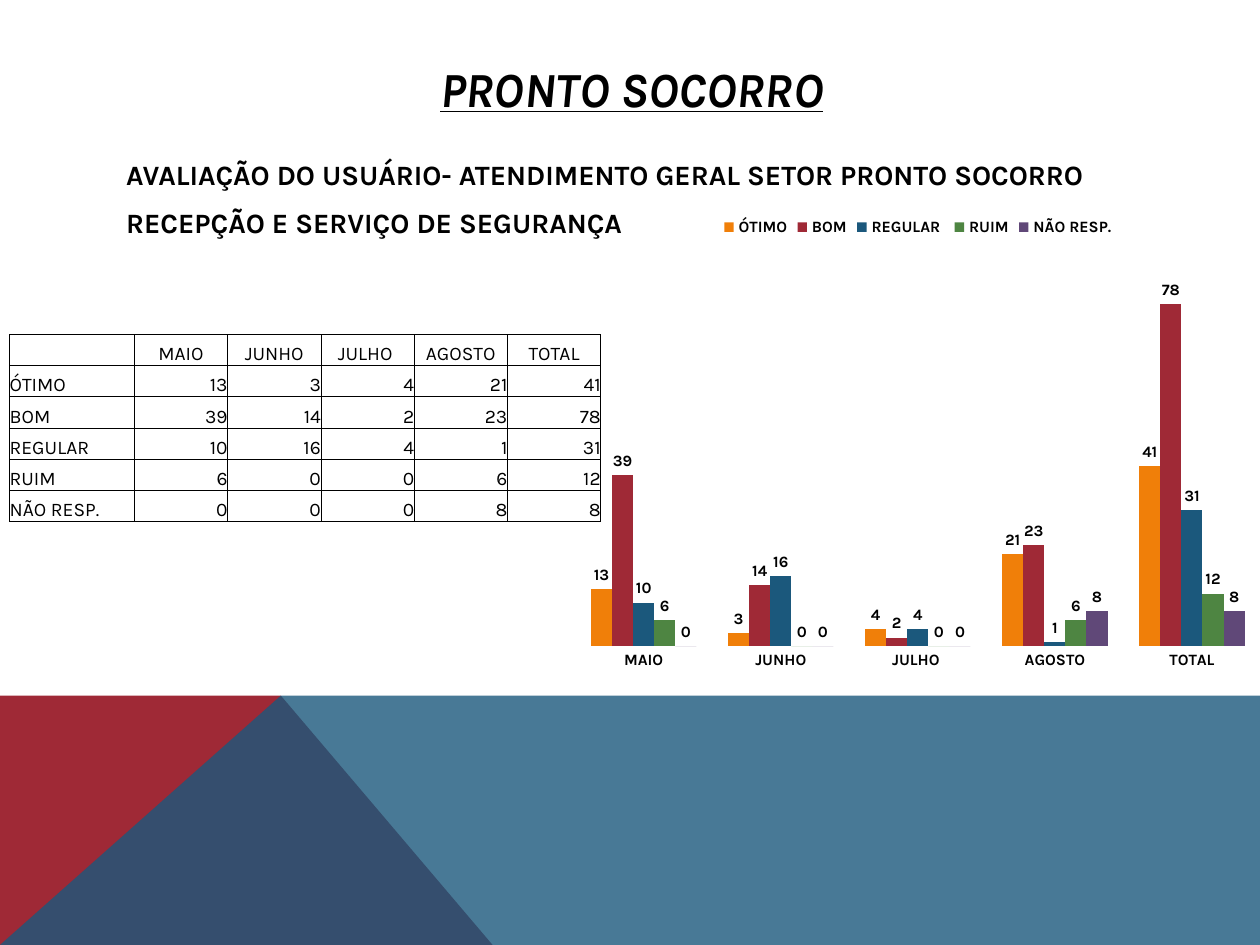
from lxml import etree
from pptx import Presentation
from pptx.chart.data import CategoryChartData
from pptx.dml.color import RGBColor
from pptx.enum.chart import XL_CHART_TYPE, XL_LABEL_POSITION, XL_LEGEND_POSITION, XL_TICK_MARK
from pptx.enum.text import MSO_ANCHOR, PP_ALIGN
from pptx.oxml import parse_xml
from pptx.oxml.ns import nsdecls, qn
from pptx.util import Pt

COLUMNS = XL_CHART_TYPE.COLUMN_CLUSTERED
OUTSIDE = XL_LABEL_POSITION.OUTSIDE_END
LEGEND_TOP = XL_LEGEND_POSITION.TOP
NO_TICKS = XL_TICK_MARK.NONE
LEFT, CENTER, RIGHT = PP_ALIGN.LEFT, PP_ALIGN.CENTER, PP_ALIGN.RIGHT
TOP, MIDDLE, BOTTOM = MSO_ANCHOR.TOP, MSO_ANCHOR.MIDDLE, MSO_ANCHOR.BOTTOM

BLACK = RGBColor(0x00, 0x00, 0x00)
ORANGE = RGBColor(0xF0, 0x7F, 0x09)
RED = RGBColor(0x9F, 0x29, 0x36)
BLUE = RGBColor(0x1B, 0x58, 0x7C)
GREEN = RGBColor(0x4E, 0x85, 0x42)
PURPLE = RGBColor(0x60, 0x48, 0x78)

PERIODS = ["MAIO", "JUNHO", "JULHO ", "AGOSTO", "TOTAL"]
RATINGS = [
    ("ÓTIMO", ORANGE, [13, 3, 4, 21, 41]),
    ("BOM", RED, [39, 14, 2, 23, 78]),
    ("REGULAR ", BLUE, [10, 16, 4, 1, 31]),
    ("RUIM", GREEN, [6, 0, 0, 6, 12]),
    ("NÃO RESP.", PURPLE, [0, 0, 0, 8, 8]),
]


class SlideBuilder:
    def __init__(self, page, font_name="Karla"):
        self.page = page
        self.font_name = font_name

    def style(self, font, size, bold=False, italic=False, underline=False):
        font.name = self.font_name
        font.size = Pt(size)
        font.bold = bold
        font.italic = italic
        font.underline = underline
        font.color.rgb = BLACK

    def polygon(self, points, color, opacity=100):
        corners = [(Pt(x), Pt(y)) for x, y in points]
        builder = self.page.shapes.build_freeform(*corners[0])
        builder.add_line_segments(corners[1:], close=True)
        shape = builder.convert_to_shape()
        shape.shadow.inherit = False
        shape.line.fill.background()
        shape.fill.solid()
        shape.fill.fore_color.rgb = color
        if opacity < 100:
            color_node = shape.fill._xPr.find(qn("a:solidFill"))[0]
            etree.SubElement(color_node, qn("a:alpha"), val=str(opacity * 1000))

    def text(self, lines, left, top, width, height, size, align=LEFT,
             anchor=TOP, space_before=0, **emphasis):
        box = self.page.shapes.add_textbox(Pt(left), Pt(top), Pt(width), Pt(height))
        frame = box.text_frame
        frame.word_wrap = True
        frame.vertical_anchor = anchor
        frame.text = "\n".join(lines)
        for para in frame.paragraphs:
            para.alignment = align
            para.space_before = Pt(space_before)
            self.style(para.font, size, **emphasis)

    def table(self, rows, left, top, widths, row_height, size):
        frame = self.page.shapes.add_table(
            len(rows), len(widths), Pt(left), Pt(top),
            Pt(sum(widths)), Pt(row_height * len(rows)))
        table = frame.table
        table.first_row = table.horz_banding = False
        for column, width in zip(table.columns, widths):
            column.width = Pt(width)
        for r, values in enumerate(rows):
            table.rows[r].height = Pt(row_height)
            for c, value in enumerate(values):
                align = CENTER if r == 0 else LEFT if c == 0 else RIGHT
                self.fill_cell(table.cell(r, c), str(value), align, size)

    def fill_cell(self, cell, value, align, size):
        cell.margin_left = cell.margin_right = 0
        cell.margin_top = cell.margin_bottom = 0
        cell.vertical_anchor = BOTTOM
        cell.text = value
        para = cell.text_frame.paragraphs[0]
        para.alignment = align
        self.style(para.font, size)
        if not value:
            etree.SubElement(para._p, qn("a:endParaRPr"), sz=str(size * 100))
        properties = cell._tc.get_or_add_tcPr()
        for side in ("lnL", "lnR", "lnT", "lnB"):
            border = etree.SubElement(properties, qn(f"a:{side}"), w=str(Pt(0.5)))
            fill = etree.SubElement(border, qn("a:solidFill"))
            etree.SubElement(fill, qn("a:srgbClr"), val=str(BLACK))
        cell.fill.background()

    def chart(self, categories, series_rows, left, top, width, height, size):
        data = CategoryChartData()
        data.categories = categories
        for name, _, values in series_rows:
            data.add_series(name, values)
        chart = self.page.shapes.add_chart(
            COLUMNS, Pt(left), Pt(top), Pt(width), Pt(height), data).chart
        self.style(chart.font, 10)
        chart.has_title = False
        chart.has_legend = True
        chart.legend.position = LEGEND_TOP
        chart.legend.include_in_layout = False
        self.style(chart.legend.font, size, bold=True)

        category_axis = chart.category_axis
        category_axis.major_tick_mark = category_axis.minor_tick_mark = NO_TICKS
        category_axis.format.line.fill.background()
        self.style(category_axis.tick_labels.font, size, bold=True)
        value_axis = chart.value_axis
        value_axis.visible = False
        value_axis.has_major_gridlines = False
        value_axis.minimum_scale, value_axis.maximum_scale = 0, 90

        plot = chart.plots[0]
        plot.gap_width, plot.overlap = 150, 0
        plot.vary_by_categories = False
        for series, (_, color, _) in zip(plot.series, series_rows):
            series.format.fill.solid()
            series.format.fill.fore_color.rgb = color
            labels = series.data_labels
            labels.show_value = True
            labels.position = OUTSIDE
            self.style(labels.font, size, bold=True)
        self.place_plot(chart, x=0.02, y=0.1, w=0.96, h=0.83)

    def place_plot(self, chart, **fractions):
        """Fix the inner plot area as fractions of the chart frame."""
        area = chart._chartSpace.chart.plotArea
        for old in area.findall(qn("c:layout")):
            area.remove(old)
        sizes = "".join(f'<c:{key} val="{value}"/>' for key, value in fractions.items())
        area.insert(0, parse_xml(
            f'<c:layout {nsdecls("c")}><c:manualLayout><c:layoutTarget val="inner"/>'
            f'<c:xMode val="edge"/><c:yMode val="edge"/>{sizes}'
            '</c:manualLayout></c:layout>'))


def main():
    deck = Presentation()
    deck.slide_width, deck.slide_height = Pt(720), Pt(540)
    slide = SlideBuilder(deck.slides.add_slide(deck.slide_layouts[6]))

    band_top, peak = 397.5, 160.5
    slide.polygon([(0, 540), (0, band_top), (peak, band_top), (281.5, 540)], RED)
    slide.polygon([(0, 540), (peak, band_top), (720, band_top), (720, 540)],
                  BLUE, opacity=80)

    slide.text(["PRONTO SOCORRO"], 65, 29, 592, 43, 28, CENTER, MIDDLE,
               bold=True, italic=True, underline=True)
    slide.text(["AVALIAÇÃO DO USUÁRIO- ATENDIMENTO GERAL SETOR PRONTO SOCORRO",
                "RECEPÇÃO E SERVIÇO DE SEGURANÇA"],
               65, 86.5, 592, 281.5, 16, space_before=8, bold=True)

    rows = [["", *PERIODS]]
    rows += [[name.strip(), *values] for name, _, values in RATINGS]
    slide.table(rows, 5.5, 191.2, [71.3] + [53.3] * len(PERIODS), 17.8, 11)
    slide.chart(PERIODS, RATINGS, 320.5, 116.5, 408, 272, 9)

    deck.save("out.pptx")


if __name__ == "__main__":
    main()
